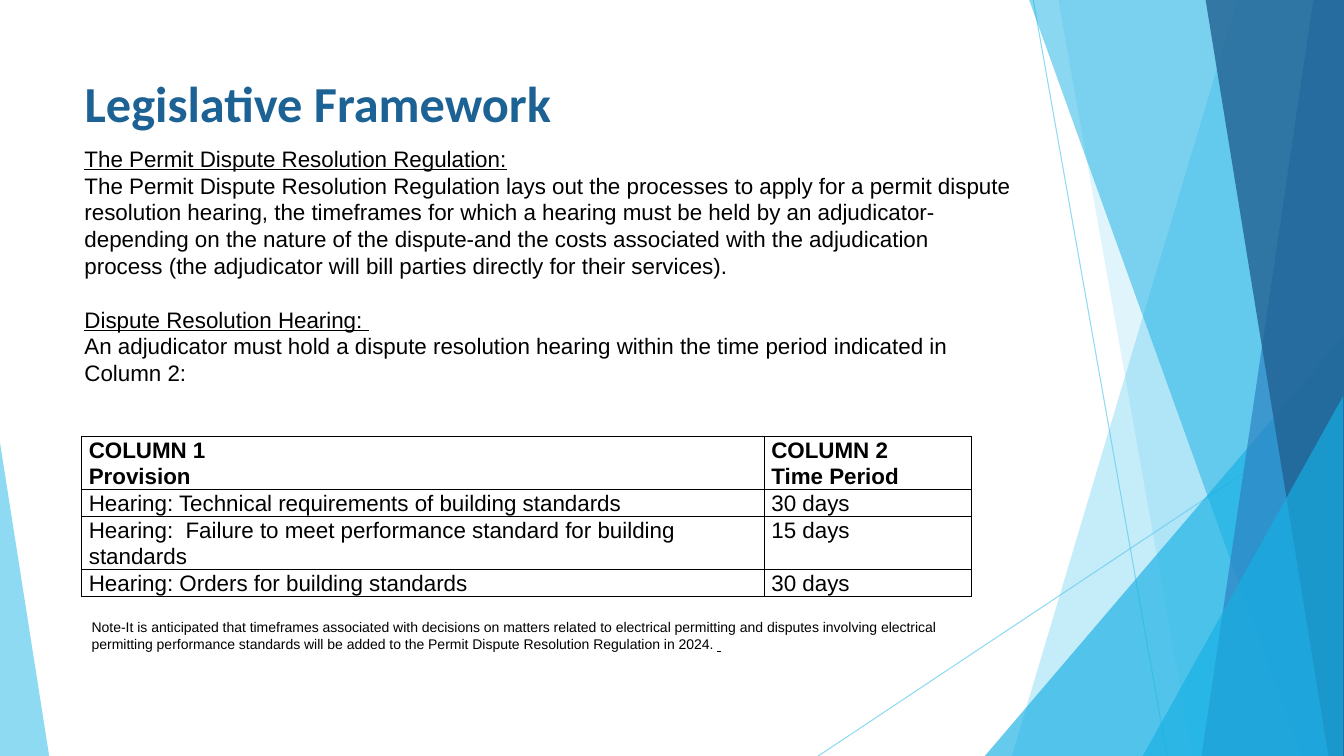
from lxml import etree
from pptx import Presentation
from pptx.dml.color import RGBColor
from pptx.enum import shapes, text
from pptx.oxml import ns
from pptx.util import Cm, Pt

WIDTH, HEIGHT = 33.87, 19.05
SKY, CYAN, BLUE, NAVY = "5FCBEF", "17B0E4", "2E83C3", "226292"
BLACK, HEADING = "000000", "1D6294"

# Facets: top-left x, bottom-left x, colour, opacity %; all reach the right edge
BACK_FACETS = [(31.19, 25.5, SKY, 36), (26.67, 30.05, SKY, 20)]
FRONT_FACETS = [(25.93, 32.79, CYAN, 50), (33.1, 30.28, BLUE, 70),
                (30.38, 33.48, NAVY, 80)]

REGULATION = (
    "The Permit Dispute Resolution Regulation lays out the processes to apply for a "
    "permit dispute resolution hearing, the timeframes for which a hearing must be held "
    "by an adjudicator-depending on the nature of the dispute-and the costs associated "
    "with the adjudication process (the adjudicator will bill parties directly for their "
    "services).")
HEARING = ("An adjudicator must hold a dispute resolution hearing within the time period "
           "indicated in Column 2:")
NOTE = ("Note-It is anticipated that timeframes associated with decisions on matters "
        "related to electrical permitting and disputes involving electrical permitting "
        "performance standards will be added to the Permit Dispute Resolution Regulation "
        "in 2024. ")
PERIODS = [
    (["COLUMN 1", "Provision"], ["COLUMN 2", "Time Period"]),
    (["Hearing: Technical requirements of building standards"], ["30 days"]),
    (["Hearing:  Failure to meet performance standard for building standards"], ["15 days"]),
    (["Hearing: Orders for building standards"], ["30 days"]),
]
ROW_HEIGHTS = [1.34, 0.67, 1.34, 0.67]


def rgb(value):
    return RGBColor.from_string(value)


def set_opacity(shape, percent):
    for colour in shape._element.iter(ns.qn("a:srgbClr")):
        etree.SubElement(colour, ns.qn("a:alpha"), val=str(percent * 1000))


def paint(shape, colour, opacity):
    shape.shadow.inherit = False
    shape.fill.solid()
    shape.fill.fore_color.rgb = rgb(colour)
    shape.line.fill.background()
    set_opacity(shape, opacity)


def add_ray(slide, *ends):
    ray = slide.shapes.add_connector(shapes.MSO_CONNECTOR.STRAIGHT, *map(Cm, ends))
    ray.line.color.rgb = rgb(SKY)
    ray.line.width = Pt(0.75)
    set_opacity(ray, 70)
    etree.SubElement(ray._element.spPr, ns.qn("a:effectLst"))


def add_facet(slide, top_x, bottom_x, colour, opacity):
    top = Cm(-0.02)
    outline = slide.shapes.build_freeform(Cm(top_x), top)
    outline.add_line_segments([(Cm(WIDTH), top), (Cm(WIDTH), Cm(HEIGHT)),
                               (Cm(bottom_x), Cm(HEIGHT))], close=True)
    paint(outline.convert_to_shape(), colour, opacity)


def add_wedge(slide, left, top, width, apex, colour, opacity):
    wedge = slide.shapes.add_shape(shapes.MSO_SHAPE.ISOSCELES_TRIANGLE, Cm(left), Cm(top),
                                   Cm(width), Cm(HEIGHT - top))
    wedge.adjustments[0] = apex
    paint(wedge, colour, opacity)


def write(paragraph, words, size=16, colour=BLACK, **formats):
    run = paragraph.add_run()
    run.text = words
    settings = {"name": "Arial", "size": Pt(size), **formats}
    for attribute, value in settings.items():
        setattr(run.font, attribute, value)
    run.font.color.rgb = rgb(colour)


def add_passage(slide, left, top, width, height, paragraphs, pitch):
    """Each paragraph is (space before in points, [(words, formats), ...])."""
    box = slide.shapes.add_textbox(Cm(left), Cm(top), Cm(width), Cm(height))
    frame = box.text_frame
    frame.word_wrap = True
    for index, (gap, runs) in enumerate(paragraphs):
        paragraph = frame.add_paragraph() if index else frame.paragraphs[0]
        paragraph.space_before = Pt(gap)
        paragraph.line_spacing = Pt(pitch)
        for words, formats in runs:
            write(paragraph, words, **formats)


def add_borders(cell):
    properties = cell._tc.get_or_add_tcPr()
    for side in ("lnL", "lnR", "lnT", "lnB"):
        border = etree.SubElement(properties, ns.qn(f"a:{side}"), w=str(Pt(1)))
        fill = etree.SubElement(border, ns.qn("a:solidFill"))
        etree.SubElement(fill, ns.qn("a:srgbClr"), val=BLACK)


def fill_cell(cell, lines, bold):
    add_borders(cell)
    cell.fill.background()
    margins = {"margin_left": Cm(0.18), "margin_right": Cm(0.18),
               "margin_top": 0, "margin_bottom": 0}
    for attribute, value in margins.items():
        setattr(cell, attribute, value)
    for index, line in enumerate(lines):
        frame = cell.text_frame
        paragraph = frame.add_paragraph() if index else frame.paragraphs[0]
        paragraph.line_spacing = Pt(19)
        write(paragraph, line, bold=bold)


def add_periods(slide):
    table = slide.shapes.add_table(len(PERIODS), 2, Cm(2.06), Cm(11), Cm(22.43),
                                   Cm(sum(ROW_HEIGHTS))).table
    table.first_row = table.horz_banding = False
    for column, width in zip(table.columns, (17.2, 5.23)):
        column.width = Cm(width)
    for r, (row, height) in enumerate(zip(PERIODS, ROW_HEIGHTS)):
        table.rows[r].height = Cm(height)
        for c, lines in enumerate(row):
            fill_cell(table.cell(r, c), lines, bold=r == 0)


def set_title(slide, words):
    title = slide.shapes.title
    place = {"left": Cm(1.88), "top": Cm(1.7), "width": Cm(23.88), "height": Cm(3.66)}
    for attribute, value in place.items():
        setattr(title, attribute, value)
    frame = title.text_frame
    frame.auto_size = text.MSO_AUTO_SIZE.NONE
    frame.vertical_anchor = text.MSO_ANCHOR.TOP
    frame.paragraphs[0].alignment = text.PP_ALIGN.LEFT
    write(frame.paragraphs[0], words, 36, HEADING, name="Calibri", bold=True)


def main():
    deck = Presentation()
    deck.slide_width, deck.slide_height = Cm(WIDTH), Cm(HEIGHT)
    slide = deck.slides.add_slide(deck.slide_layouts[5])

    # Decoration, from back to front
    add_ray(slide, 26.04, 0, 29.41, HEIGHT)
    add_ray(slide, WIDTH, 10.24, 20.62, HEIGHT)
    for facet in BACK_FACETS:
        add_facet(slide, *facet)
    add_wedge(slide, 24.82, 8.46, 9.04, 1, CYAN, 66)
    for facet in FRONT_FACETS:
        add_facet(slide, *facet)
    add_wedge(slide, 28.8, 9.98, 5.05, 1, CYAN, 66)
    add_wedge(slide, 0, 11.15, 1.24, 0, SKY, 70)

    # Title and explanation
    set_title(slide, "Legislative Framework")
    underlined = {"underline": True}
    add_passage(slide, 1.88, 3.53, 23.88, 6.76, [
        (0, [("The Permit Dispute Resolution Regulation:", underlined)]),
        (0, [(REGULATION, {})]),
        (19.15, [("Dispute Resolution Hearing: ", underlined)]),
        (0, [(HEARING, {})]),
    ], pitch=19.15)

    # Time periods and note
    add_periods(slide)
    add_passage(slide, 2.06, 15.44, 23.22, 1.12, [
        (0, [(NOTE, {"size": 10}), (" ", {"size": 10, "italic": True, **underlined})]),
    ], pitch=12.4)

    deck.save("out.pptx")


if __name__ == "__main__":
    main()
